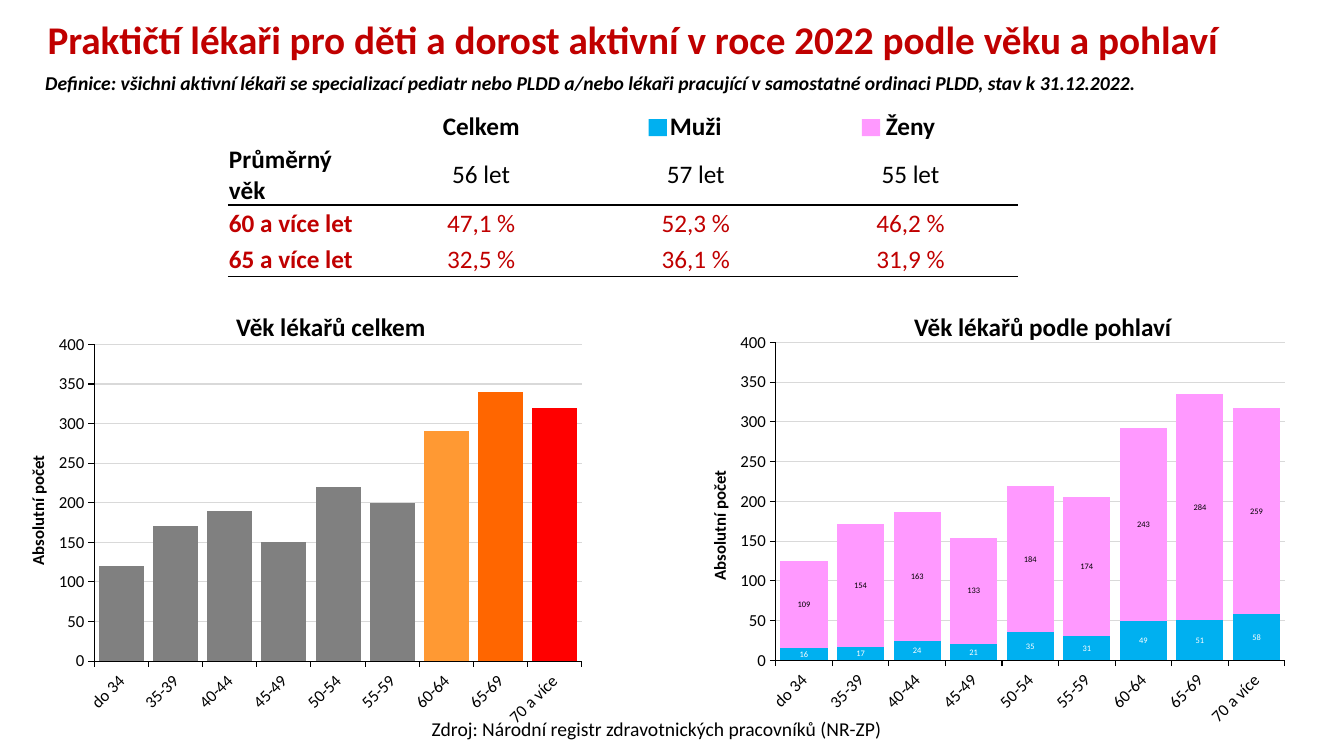
from lxml.etree import SubElement
from pptx import Presentation
from pptx.chart.data import CategoryChartData
from pptx.dml.color import RGBColor
from pptx.enum.chart import XL_CHART_TYPE, XL_LABEL_POSITION, XL_TICK_MARK
from pptx.enum.shapes import MSO_SHAPE
from pptx.enum.text import MSO_ANCHOR, PP_ALIGN
from pptx.oxml import parse_xml
from pptx.oxml.ns import nsdecls, qn
from pptx.util import Cm, Pt

FONT = "Calibri"
BLACK, WHITE, DARK_RED = "000000", "FFFFFF", "C00000"
BLUE, PINK, GRAY, GRID = "00B0F0", "FF99FF", "808080", "D9D9D9"


def color(hex_value):
    return RGBColor.from_string(hex_value)


def add_text(text, left, top, width, height, size, bold=False, align=PP_ALIGN.CENTER, hex_value=BLACK):
    box = slide.shapes.add_textbox(Cm(left), Cm(top), Cm(width), Cm(height))
    box.text_frame.word_wrap = True
    box.text_frame.text = text
    paragraph = box.text_frame.paragraphs[0]
    paragraph.alignment = align
    font = paragraph.runs[0].font
    font.name, font.size, font.bold = FONT, Pt(size), bold
    font.color.rgb = color(hex_value)
    return box


presentation = Presentation()
presentation.slide_width, presentation.slide_height = Cm(33.87), Cm(19.05)
slide = presentation.slides.add_slide(presentation.slide_layouts[6])

# Title
title = add_text("Praktičtí lékaři pro děti a dorost aktivní v roce 2022 podle věku a pohlaví",
                 0.95, 0.28, 30.96, 1.57, 28, True, PP_ALIGN.LEFT, DARK_RED)
title.text_frame.vertical_anchor = MSO_ANCHOR.MIDDLE
title.text_frame.paragraphs[0].line_spacing = 0.9

# Charts: all doctors, then doctors by sex
ages = ["do 34", "35-39", "40-44", "45-49", "50-54", "55-59", "60-64", "65-69", "70 a více"]
total = [120, 170, 190, 150, 220, 200, 290, 340, 320]
men = [16, 17, 24, 21, 35, 31, 49, 51, 58]
women = [109, 154, 163, 133, 184, 174, 243, 284, 259]
charts = [
    (XL_CHART_TYPE.COLUMN_CLUSTERED, (1.22, 8.23, 13.72, 10.31), [("Celkem", total, GRAY, None)]),
    (XL_CHART_TYPE.COLUMN_STACKED, (18.39, 8.18, 14.27, 10.34),
     [("Muži", men, BLUE, WHITE), ("Ženy", women, PINK, BLACK)]),
]
for chart_type, place, groups in charts:
    data = CategoryChartData()
    data.categories = ages
    for name, values, _, _ in groups:
        data.add_series(name, values)
    chart = slide.shapes.add_chart(chart_type, *map(Cm, place), data).chart
    chart.has_legend = chart.has_title = False
    chart.font.name, chart.font.size = FONT, Pt(12)
    chart.font.color.rgb = color(BLACK)

    plot = chart.plots[0]
    plot.vary_by_categories = False
    plot.gap_width = 20
    plot.overlap = 100 if len(groups) > 1 else 0
    for series, (_, _, fill, label) in zip(plot.series, groups):
        series.format.fill.solid()
        series.format.fill.fore_color.rgb = color(fill)
        if label:
            labels = series.data_labels
            labels.show_value = True
            labels.position = XL_LABEL_POSITION.CENTER
            labels.font.name, labels.font.size = FONT, Pt(6)
            labels.font.color.rgb = color(label)

    # Axes
    for axis in (chart.category_axis, chart.value_axis):
        axis.major_tick_mark = XL_TICK_MARK.OUTSIDE
        axis.minor_tick_mark = XL_TICK_MARK.NONE
        axis.format.line.color.rgb = color(BLACK)
        axis.format.line.width = Pt(0.75)
        axis.tick_labels.font.size = Pt(12)
    value_axis = chart.value_axis
    value_axis.minimum_scale, value_axis.maximum_scale, value_axis.major_unit = 0, 400, 50
    value_axis.major_gridlines.format.line.color.rgb = color(GRID)
    value_axis.major_gridlines.format.line.width = Pt(0.75)
    slanted = chart.category_axis._element.find(qn("c:txPr")).find(qn("a:bodyPr"))
    slanted.set("rot", "-2700000")
    slanted.set("vert", "horz")

    # Inner plot area, from its margins within the chart
    plot_area = chart._chartSpace.find(qn("c:chart")).find(qn("c:plotArea"))
    for old_layout in plot_area.findall(qn("c:layout")):
        plot_area.remove(old_layout)
    layout = parse_xml(f"<c:layout {nsdecls('c')}/>")
    plot_area.insert(0, layout)
    manual = SubElement(layout, qn("c:manualLayout"))
    width, height = place[2:]
    for tag, value in [("layoutTarget", "inner"), ("xMode", "edge"), ("yMode", "edge"),
                       ("x", 1.16 / width), ("y", 0.45 / height),
                       ("w", 1 - 1.44 / width), ("h", 1 - 2.33 / height)]:
        SubElement(manual, qn(f"c:{tag}")).set("val", str(value))

    # Highlighted age groups of the total
    if len(groups) == 1:
        for index, fill in enumerate(["FF9933", "FF6600", "FF0000"], start=6):
            point_fill = plot.series[0].points[index].format.fill
            point_fill.solid()
            point_fill.fore_color.rgb = color(fill)

# Chart headings and axis titles
for heading, left in [("Věk lékařů celkem", 3.07), ("Věk lékařů podle pohlaví", 21.01)]:
    add_text(heading, left, 7.72, 10.54, 1.02, 18, True)
for left, top in [(-0.72, 12.48), (16.46, 12.86)]:
    axis_title = add_text("Absolutní počet", left, top, 3.33, 0.76, 12, True)
    axis_title.text_frame.word_wrap = False
    axis_title.rotation = 270

# Table of average age and share of older doctors
rows = [
    ("", "Celkem", "Muži", "Ženy"),
    ("Průměrný věk", "56 let", "57 let", "55 let"),
    ("60 a více let", "47,1 %", "52,3 %", "46,2 %"),
    ("65 a více let", "32,5 %", "36,1 %", "31,9 %"),
]
frame = slide.shapes.add_table(4, 4, Cm(5.74), Cm(2.75), Cm(19.91), Cm(3.52))
table = frame.table
table.first_row = table.horz_banding = False
table._tbl.tblPr.find(qn("a:tableStyleId")).text = "{2D5ABB26-0587-4C30-8999-92F81FD0307C}"
for column, width in zip(table.columns, (3.68, 5.41, 5.41, 5.41)):
    column.width = Cm(width)
for row, height in zip(table.rows, (0.86, 0.86, 0.94, 0.86)):
    row.height = Cm(height)
for r, texts in enumerate(rows):
    for c, text in enumerate(texts):
        cell = table.cell(r, c)
        cell.fill.background()
        cell.vertical_anchor = MSO_ANCHOR.MIDDLE
        cell.margin_left = cell.margin_right = cell.margin_top = Cm(0.03)
        cell.margin_bottom = 0
        cell.text_frame.text = text
        paragraph = cell.text_frame.paragraphs[0]
        paragraph.alignment = PP_ALIGN.CENTER if c else PP_ALIGN.LEFT
        paragraph.font.size = Pt(18)
        for run in paragraph.runs:
            run.font.name, run.font.size = FONT, Pt(18)
            run.font.bold = r == 0 or c == 0
            run.font.color.rgb = color(DARK_RED if r > 1 else BLACK)
        if r in (1, 3):
            border = parse_xml(f'<a:lnB {nsdecls("a")} w="12700"><a:solidFill>'
                               f'<a:srgbClr val="{BLACK}"/></a:solidFill></a:lnB>')
            cell._tc.get_or_add_tcPr().insert(0, border)

# Colour keys beside the table headings
for left, fill in [(16.35, BLUE), (21.72, PINK)]:
    key = slide.shapes.add_shape(MSO_SHAPE.RECTANGLE, Cm(left), Cm(3), Cm(0.46), Cm(0.43))
    key.shadow.inherit = False
    key.fill.solid()
    key.fill.fore_color.rgb = color(fill)
    key.line.fill.background()

# Definition and source
definition = add_text("Definice: všichni aktivní lékaři se specializací pediatr nebo PLDD a/nebo lékaři pracující "
                      "v samostatné ordinaci PLDD, stav k 31.12.2022.",
                      0.89, 1.65, 32.03, 0.86, 14, True, PP_ALIGN.LEFT)
definition.text_frame.paragraphs[0].runs[0].font.italic = True
add_text("Zdroj: Národní registr zdravotnických pracovníků (NR-ZP)", 8.08, 17.94, 16.94, 0.86, 14)

presentation.save("out.pptx")
